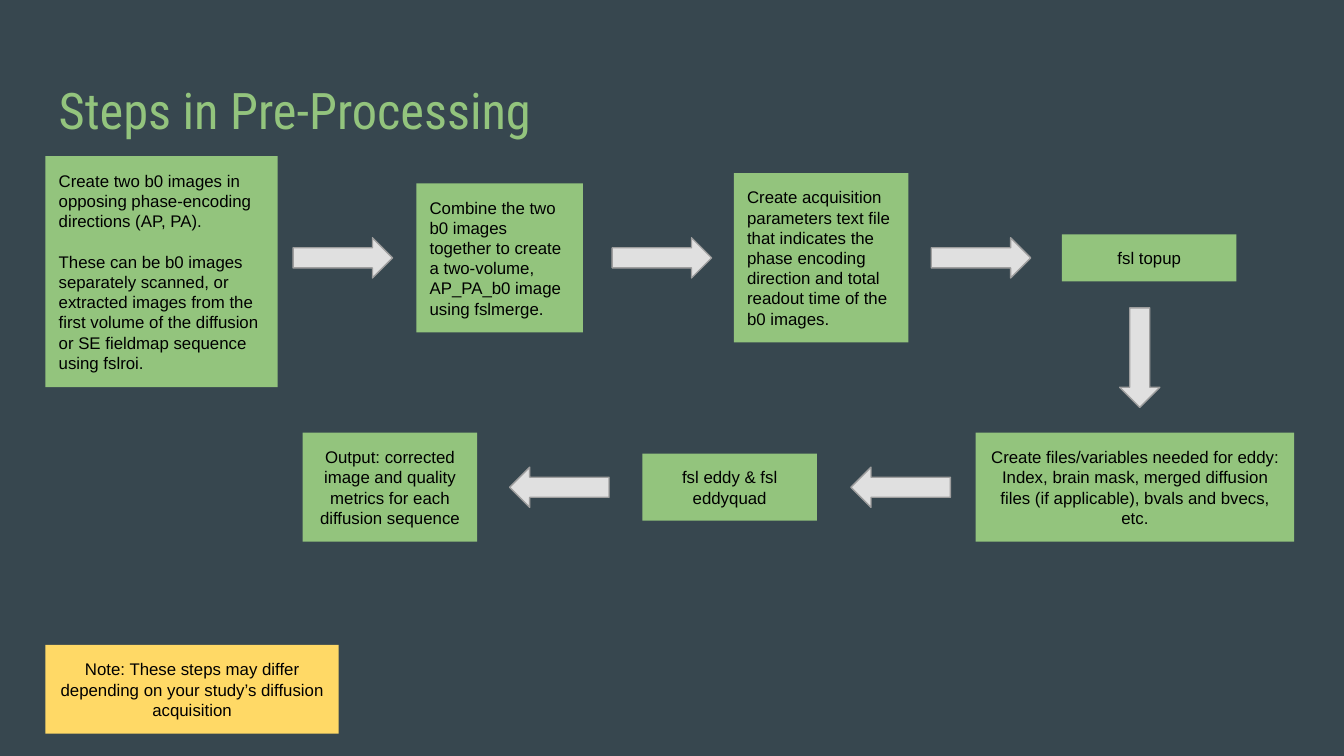
from dataclasses import dataclass

from lxml import etree
from pptx import Presentation
from pptx import util as u
from pptx.dml import color
from pptx.enum import shapes, text


@dataclass(frozen=True)
class Theme:
    background: str = "37474F"
    green: str = "93C47D"
    yellow: str = "FFD966"
    ink: str = "000000"
    arrow_fill: str = "E0E0E0"
    arrow_line: str = "9E9E9E"
    title_font: str = "Roboto Condensed"
    body_font: str = "Arial"
    title_size: float = 27
    body_size: float = 9
    paragraph_gap: float = 10.8


@dataclass(frozen=True)
class Box:
    """A region of the slide, in centimetres."""
    left: float
    top: float
    width: float
    height: float

    @property
    def middle(self):
        return self.top + self.height / 2

    def lengths(self):
        return [u.Cm(value) for value in (self.left, self.top, self.width, self.height)]


@dataclass(frozen=True)
class Step:
    """A card; offset runs from the row's left edge, drop from its middle line."""
    offset: float
    width: float
    height: float
    paragraphs: tuple
    centred: bool = True
    drop: float = 0


THEME = Theme()
MARGIN = 0.86
INSET = 0.25
ARROW_LENGTH, ARROW_HEIGHT = 1.88, 0.76
RIGHT, DOWN, LEFT = 0, 90, 180

PREPARATION = (
    Step(0, 4.39, 4.37, (
        "Create two b0 images in opposing phase-encoding directions (AP, PA).",
        "These can be b0 images separately scanned, or extracted images from the "
        "first volume of the diffusion or SE fieldmap sequence using fslroi.",
    ), centred=False, drop=0.26),
    Step(7.01, 3.15, 2.82, (
        "Combine the two b0 images together to create a two-volume, AP_PA_b0 image "
        "using fslmerge.",
    ), centred=False),
    Step(13.01, 3.3, 3.2, (
        "Create acquisition parameters text file that indicates the phase encoding "
        "direction and total readout time of the b0 images.",
    ), centred=False),
    Step(19.21, 3.3, 0.89, ("fsl topup",)),
)
CORRECTION = (
    Step(12.72, 6.02, 2.06, (
        "Create files/variables needed for eddy:",
        "Index, brain mask, merged diffusion files (if applicable), bvals and bvecs, etc.",
    )),
    Step(6.42, 3.3, 1.27, ("fsl eddy & fsl eddyquad",)),
    Step(0, 3.3, 2.06, (
        "Output: corrected image and quality metrics for each diffusion sequence",
    )),
)


def rgb(value):
    return color.RGBColor.from_string(value)


def set_insets(frame):
    frame.margin_left = frame.margin_right = u.Cm(INSET)
    frame.margin_top = frame.margin_bottom = u.Cm(INSET)
    frame.word_wrap = True


def add_run(paragraph, words, font, size, ink):
    run = paragraph.add_run()
    run.text = words
    run.font.name = font
    run.font.size = u.Pt(size)
    run.font.color.rgb = rgb(ink)


def add_title(slide, box):
    title = slide.shapes.title
    title.left, title.top, title.width, title.height = box.lengths()
    frame = title.text_frame
    set_insets(frame)
    frame.auto_size = text.MSO_AUTO_SIZE.NONE
    frame.vertical_anchor = text.MSO_ANCHOR.TOP
    paragraph = frame.paragraphs[0]
    paragraph.alignment = text.PP_ALIGN.LEFT
    add_run(paragraph, "Steps in Pre-Processing",
            THEME.title_font, THEME.title_size, THEME.green)


def add_card(slide, box, paragraphs, fill, centred=True):
    card = slide.shapes.add_shape(shapes.MSO_SHAPE.RECTANGLE, *box.lengths())
    card.shadow.inherit = False
    card.fill.solid()
    card.fill.fore_color.rgb = rgb(fill)
    card.line.fill.background()
    frame = card.text_frame
    set_insets(frame)
    frame.auto_size = text.MSO_AUTO_SIZE.SHAPE_TO_FIT_TEXT
    frame.vertical_anchor = text.MSO_ANCHOR.MIDDLE
    for index, words in enumerate(paragraphs):
        paragraph = frame.add_paragraph() if index else frame.paragraphs[0]
        paragraph.alignment = text.PP_ALIGN.CENTER if centred else text.PP_ALIGN.LEFT
        if index and not centred:
            paragraph.space_before = u.Pt(THEME.paragraph_gap)
        add_run(paragraph, words, THEME.body_font, THEME.body_size, THEME.ink)


def add_block_arrow(slide, centre_x, centre_y, direction):
    box = Box(centre_x - ARROW_LENGTH / 2, centre_y - ARROW_HEIGHT / 2,
              ARROW_LENGTH, ARROW_HEIGHT)
    arrow = slide.shapes.add_shape(shapes.MSO_SHAPE.RIGHT_ARROW, *box.lengths())
    arrow.rotation = direction
    arrow.shadow.inherit = False
    arrow.fill.solid()
    arrow.fill.fore_color.rgb = rgb(THEME.arrow_fill)
    arrow.line.color.rgb = rgb(THEME.arrow_line)
    arrow.line.width = u.Pt(0.75)


def add_process_row(slide, box, steps, arrow_offsets, direction):
    for step in steps:
        card_box = Box(box.left + step.offset,
                       box.middle + step.drop - step.height / 2,
                       step.width, step.height)
        add_card(slide, card_box, step.paragraphs, THEME.green, step.centred)
    for offset in arrow_offsets:
        add_block_arrow(slide, box.left + offset, box.middle, direction)


def add_note(slide, box):
    words = "Note: These steps may differ depending on your study’s diffusion acquisition"
    add_card(slide, box, (words,), THEME.yellow)


def main():
    presentation = Presentation()
    presentation.slide_width = u.Cm(25.4)
    presentation.slide_height = u.Cm(14.29)
    slide = presentation.slides.add_slide(presentation.slide_layouts.get_by_name("Title Only"))
    slide.background.fill.solid()
    slide.background.fill.fore_color.rgb = rgb(THEME.background)

    add_title(slide, Box(MARGIN, 1.24, 23.67, 1.6))
    add_process_row(slide, Box(MARGIN, 2.69, 22.51, 4.37), PREPARATION,
                    [5.62 + 6.03 * index for index in range(3)], RIGHT)
    add_block_arrow(slide, 21.54, 6.76, DOWN)
    add_process_row(slide, Box(5.72, 8.18, 18.74, 2.06), CORRECTION,
                    [11.3, 4.85], LEFT)
    add_note(slide, Box(MARGIN, 12.19, 5.54, 1.68))
    presentation.save("out.pptx")


if __name__ == "__main__":
    main()
